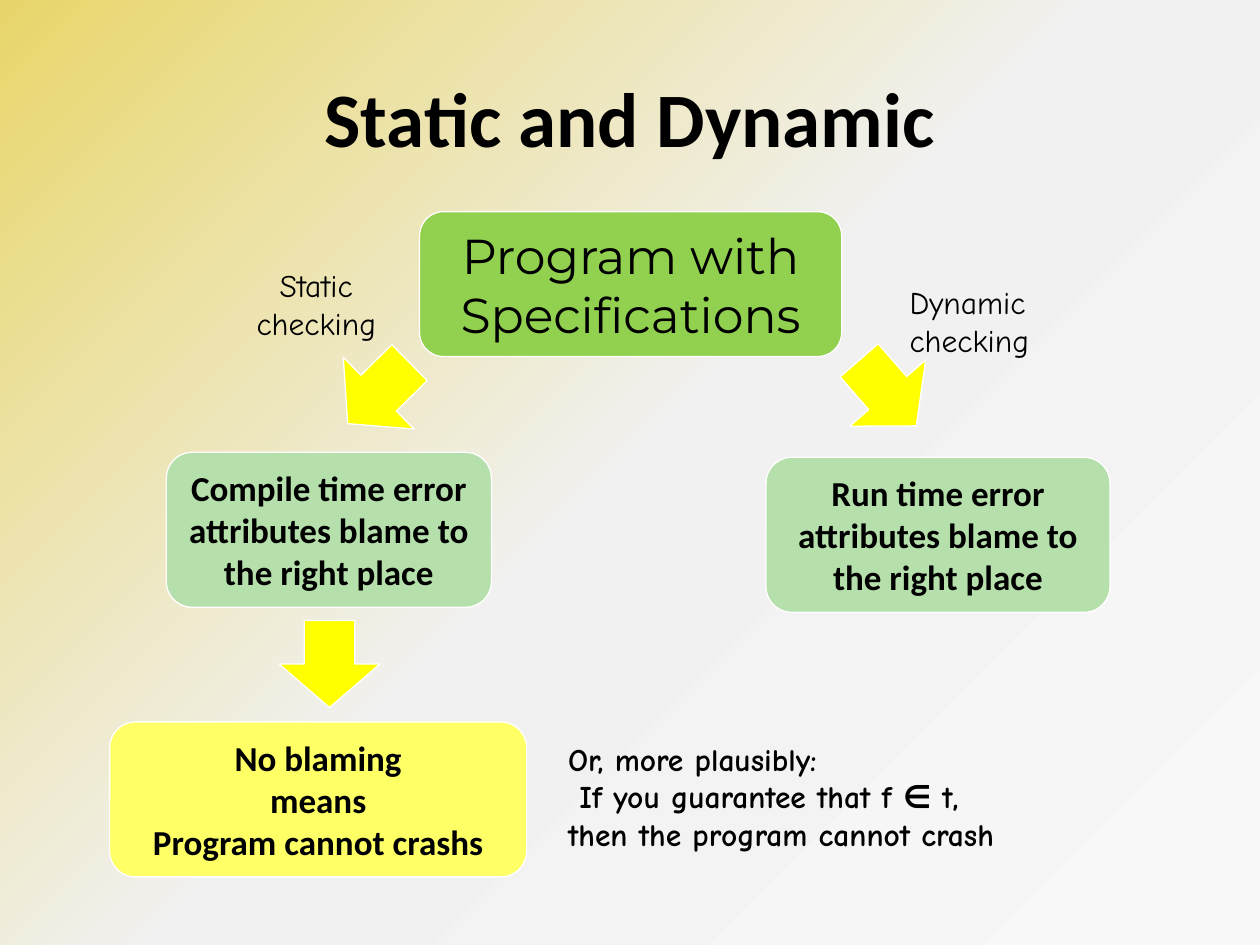
from copy import deepcopy

from pptx import Presentation
from pptx import util as u
from pptx.dml.color import RGBColor
from pptx.enum import shapes, text
from pptx.oxml.ns import qn

BLACK = RGBColor(0x00, 0x00, 0x00)
WHITE = RGBColor(0xFF, 0xFF, 0xFF)
GREEN = RGBColor(0x92, 0xD0, 0x50)
PALE_GREEN = RGBColor(0xB5, 0xDF, 0xAB)
YELLOW = RGBColor(0xFF, 0xFF, 0x00)
LEMON = RGBColor(0xFF, 0xFF, 0x66)
BACKDROP = [(0, RGBColor(0xE8, 0xD6, 0x6A)),
            (0.5, RGBColor(0xF1, 0xF1, 0xF1)),
            (1, RGBColor(0xF8, 0xF8, 0xF8))]

HEADING_FONT, START_FONT, NOTE_FONT = "Calibri", "Montserrat", "Comic Neue"
CENTER, LEFT = text.PP_ALIGN.CENTER, text.PP_ALIGN.LEFT
MIDDLE, TOP = text.MSO_ANCHOR.MIDDLE, text.MSO_ANCHOR.TOP


def write(frame, lines, *, font=HEADING_FONT, size=20, bold=True,
          align=CENTER, anchor=MIDDLE, wrap=True):
    """Fill a text frame, one paragraph for each line."""
    frame.word_wrap = wrap
    frame.vertical_anchor = anchor
    for index, line in enumerate(lines.split("\n")):
        paragraph = frame.add_paragraph() if index else frame.paragraphs[0]
        paragraph.alignment = align
        run = paragraph.add_run()
        run.text = line
        run.font.name, run.font.size = font, u.Pt(size)
        run.font.bold, run.font.color.rgb = bold, BLACK


class FlowSlide:
    """Style and elements of the flow diagram."""

    arrow_size = (0.69, 0.8)
    outline = 0.75

    def __init__(self, deck):
        self.slide = deck.slides.add_slide(deck.slide_layouts[5])

    def background(self, stops, angle):
        fill = self.slide.background.fill
        fill.gradient()
        fill.gradient_angle = angle
        # A new gradient has two stops: repeat the last for the rest
        stop_list = next(self.slide.element.iter(qn("a:gsLst")))
        while len(stop_list) < len(stops):
            stop_list.append(deepcopy(stop_list[-1]))
        for stop, (position, color) in zip(fill.gradient_stops, stops):
            stop.position, stop.color.rgb = position, color

    def title(self, words, *place):
        heading = self.slide.shapes.title
        heading.left, heading.top, heading.width, heading.height = map(u.Inches, place)
        write(heading.text_frame, words, size=44)

    def _block(self, preset, color, place):
        block = self.slide.shapes.add_shape(preset, *map(u.Inches, place))
        block.shadow.inherit = False
        block.fill.solid()
        block.fill.fore_color.rgb = color
        block.line.color.rgb = WHITE
        block.line.width = u.Pt(self.outline)
        return block

    def box(self, words, color, *place, **style):
        block = self._block(shapes.MSO_SHAPE.ROUNDED_RECTANGLE, color, place)
        write(block.text_frame, words, **style)

    def arrow(self, left, top, angle):
        place = (left, top, *self.arrow_size)
        self._block(shapes.MSO_SHAPE.RIGHT_ARROW, YELLOW, place).rotation = angle

    def note(self, words, *place, bold=False, align=LEFT):
        label = self.slide.shapes.add_textbox(*map(u.Inches, place))
        write(label.text_frame, words, font=NOTE_FONT, size=18, bold=bold,
              align=align, anchor=TOP, wrap=False)


def main():
    deck = Presentation()
    deck.slide_width, deck.slide_height = u.Inches(10), u.Inches(7.5)
    flow = FlowSlide(deck)
    flow.background(BACKDROP, 315)
    flow.title("Static and Dynamic", 0.5, 0.3, 9, 1.25)

    # Starting point and the two kinds of error
    flow.box("Program with Specifications", GREEN, 3.33, 1.68, 3.35, 1.15,
             font=START_FONT, size=28, bold=False)
    blame = "time error attributes blame to the right place"
    flow.box(f"Run {blame}", PALE_GREEN, 6.08, 3.63, 2.73, 1.23)
    flow.box(f"Compile {blame}", PALE_GREEN, 1.32, 3.59, 2.58, 1.23)

    # Branches with their labels
    flow.arrow(2.66, 2.72, 135.4)
    flow.arrow(6.7, 2.72, 48.9)
    flow.note("Dynamic\nchecking", 7.12, 2.2, 1.22, 0.71)
    flow.note("Static\nchecking", 1.9, 2.06, 1.22, 0.71, align=CENTER)

    # Conclusion of the static branch
    flow.arrow(2.27, 4.87, 90)
    flow.box("No blaming\nmeans\nProgram cannot crashs", LEMON, 0.87, 5.73, 3.31, 1.23)
    flow.note("Or, more plausibly:\n If you guarantee that f ∈ t,\n"
              "then the program cannot crash", 4.41, 5.82, 4.01, 1.01, bold=True)

    deck.save("out.pptx")


if __name__ == "__main__":
    main()
